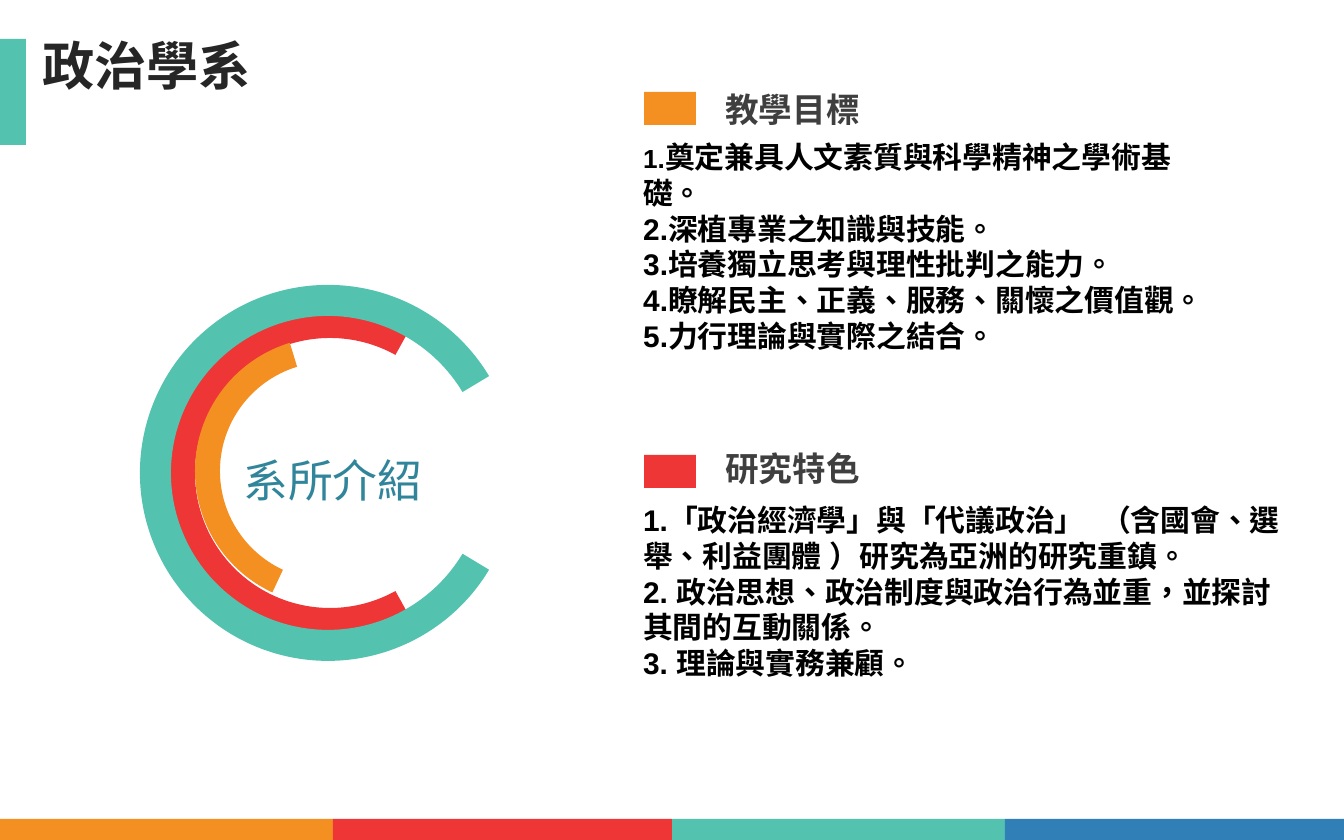
from lxml.etree import SubElement
from pptx import Presentation
from pptx.dml.color import RGBColor
from pptx.enum.lang import MSO_LANGUAGE_ID
from pptx.enum.shapes import MSO_SHAPE
from pptx.oxml.ns import qn
from pptx.util import Emu, Pt

W, H = 1344, 840
SCALE = 9144000 / W
CJK, LATIN = "Noto Sans CJK SC", "Arial"
COLORS = {
    "teal": "53C3B0", "orange": "F49022", "red": "EE3636", "blue": "317FB7",
    "title": "262626", "heading": "3F3F3F", "label": "31859B", "body": "000000",
}

TITLE = "政治學系"
LABEL = "系所介紹"
# marker colour, marker top, heading, heading top, body box, paragraphs of (text, size) runs
SECTIONS = [
    ("orange", 92, "教學目標", 82, (630, 132, 560, 267), [
        [("1.", 14), ("奠定兼具人文素質與科學精神之學術基礎。", 16)],
        [("2.深植專業之知識與技能。", 16)],
        [("3.培養獨立思考與理性批判之能力。", 16)],
        [("4.瞭解民主、正義、服務、關懷之價值觀。", 16)],
        [("5.力行理論與實際之結合。", 16)],
    ]),
    ("red", 455, "研究特色", 441, (630, 495, 677, 258), [
        [("1.「政治經濟學」與「代議政治」  （含國會、選舉、利益團體 ）研究為亞洲的研究重鎮。\v"
          "2. 政治思想、政治制度與政治行為並重，並探討其間的互動關係。", 16)],
        [("3. 理論與實務兼顧。", 16)],
    ]),
]
# colour, centre x, centre y, outer radius, inner radius, clockwise start and end angle
RINGS = [
    ("red", 330, 473, 161, 135, 61, 299),
    ("orange", 329, 471, 134, 109, 115, 253),
    ("teal", 328, 473, 188, 157, 31, 329),
]
FOOTER = [("orange", 0), ("red", 333), ("teal", 672), ("blue", 1005)]


def px(n):
    return Emu(round(n * SCALE))


def add_shape(slide, color, *box, kind=MSO_SHAPE.RECTANGLE):
    s = slide.shapes.add_shape(kind, *map(px, box))
    s.shadow.inherit = False
    s.fill.solid()
    s.fill.fore_color.rgb = RGBColor.from_string(COLORS[color])
    s.line.fill.background()
    return s


def add_ring(slide, color, cx, cy, outer, inner, start, end):
    """Draw an open ring; angles are stored in 60000ths of a degree."""
    size = 2 * outer
    s = add_shape(slide, color, cx - outer, cy - outer, size, size, kind=MSO_SHAPE.BLOCK_ARC)
    s.adjustments[0] = start * 0.6
    s.adjustments[1] = end * 0.6
    s.adjustments[2] = (outer - inner) / size


def add_text(slide, box, paragraphs, color, font=CJK, bold=True, wrap=True):
    tf = slide.shapes.add_textbox(*map(px, box)).text_frame
    tf.word_wrap = wrap
    for i, runs in enumerate(paragraphs):
        p = tf.add_paragraph() if i else tf.paragraphs[0]
        for text, size in runs:
            for j, line in enumerate(text.split("\v")):
                if j:
                    p.add_line_break()
                r = p.add_run()
                r.text = line
                r.font.size, r.font.bold, r.font.name = Pt(size), bold, font
                r.font.color.rgb = RGBColor.from_string(COLORS[color])
                r.font.language_id = MSO_LANGUAGE_ID.TRADITIONAL_CHINESE
                SubElement(r.font._element, qn("a:ea")).set("typeface", font)


prs = Presentation()
prs.slide_width, prs.slide_height = px(W), px(H)
slide = prs.slides.add_slide(prs.slide_layouts[6])

add_shape(slide, "teal", 0, 39, 26, 106)
add_text(slide, (29, 27, 238, 77), [[(TITLE, 28)]], "title", wrap=False)

ends = [x for _, x in FOOTER[1:]] + [W]
for (color, left), right in zip(FOOTER, ends):
    add_shape(slide, color, left, 819, right - left, H - 819)

for ring in RINGS:
    add_ring(slide, *ring)
add_text(slide, (230, 446, 297, 67), [[(LABEL, 24)]], "label", bold=False)

for color, marker_top, heading, heading_top, body_box, body in SECTIONS:
    add_shape(slide, color, 644, marker_top, 52, 33)
    add_text(slide, body_box, body, "body", font=LATIN)
    add_text(slide, (712, heading_top, 297, 54), [[(heading, 18)]], "heading")

prs.save("out.pptx")
